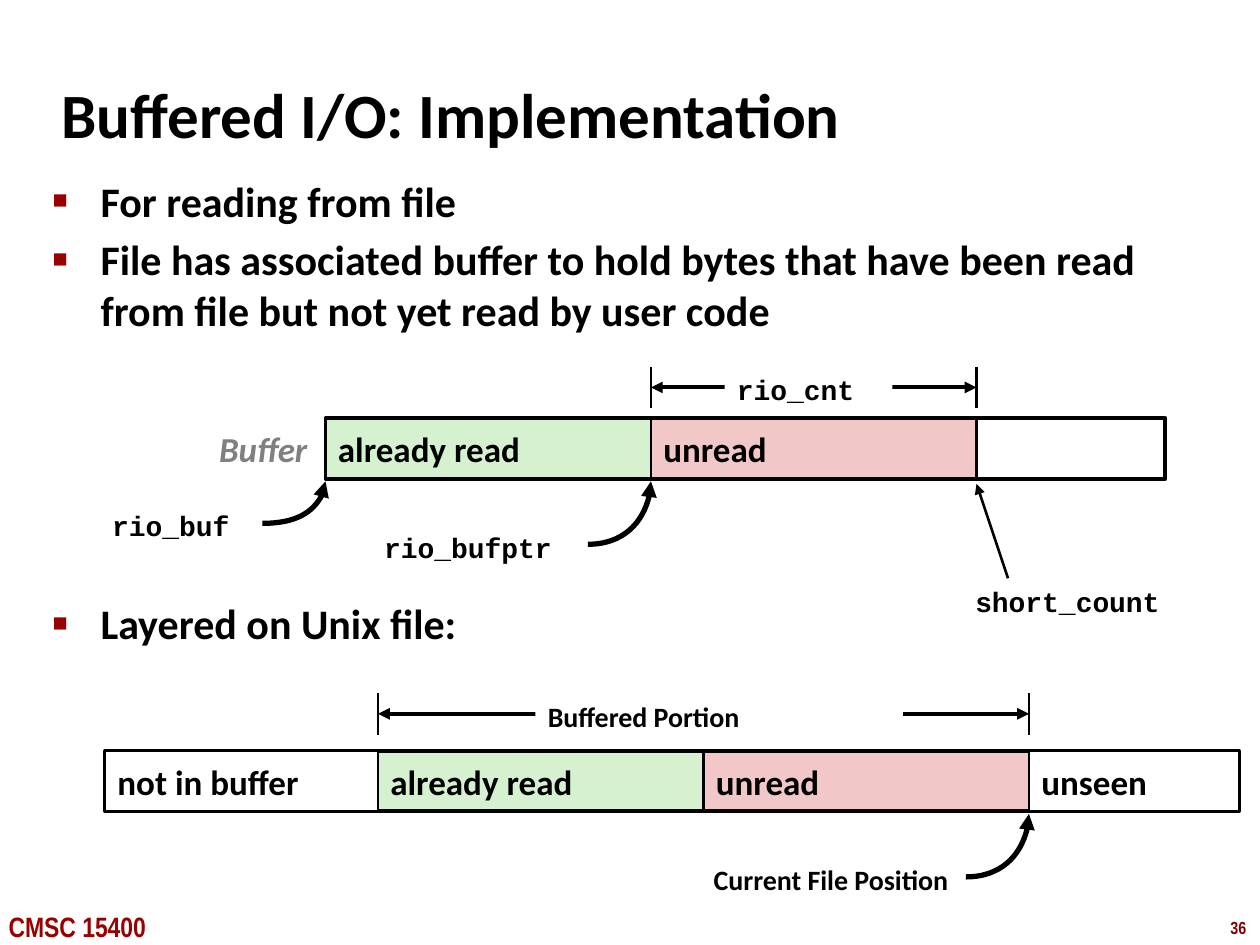
"""Build a slide on how buffered I/O is implemented."""
from dataclasses import dataclass

from lxml.etree import SubElement
from pptx import Presentation
from pptx.dml.color import RGBColor
from pptx.enum.shapes import MSO_CONNECTOR, MSO_SHAPE
from pptx.enum.text import MSO_ANCHOR, PP_ALIGN
from pptx.oxml.ns import qn
from pptx.util import Inches, Pt


@dataclass(frozen=True)
class Theme:
    ink: str = "000000"
    paper: str = "FFFFFF"
    green: str = "D5F1CF"
    pink: str = "F1C7C7"
    gray: str = "808080"
    red: str = "990000"
    dark: str = "800000"
    sans: str = "Calibri"
    mono: str = "Courier New"
    narrow: str = "Arial Narrow"
    title: int = 36
    body: int = 24
    cell: int = 20
    label: int = 16
    small: int = 10
    thin: float = 1.5
    thick: float = 2.25
    bold: float = 3


class Deck:
    def __init__(self, theme, cols=120, rows=90):
        self.theme = theme
        self.show = Presentation()
        self.show.slide_width, self.show.slide_height = Inches(10), Inches(7.5)
        self.dx = self.show.slide_width / cols
        self.dy = self.show.slide_height / rows
        self.slide = self.show.slides.add_slide(self.show.slide_layouts[6])
        self.shapes = self.slide.shapes

    def grid(self, *spots):
        return [round(n * (self.dy if i % 2 else self.dx)) for i, n in enumerate(spots)]

    def add_run(self, para, words, size, color=None, face=None, slant=False):
        run = para.add_run()
        run.text = words
        font = run.font
        font.name, font.size = face or self.theme.sans, Pt(size)
        font.bold, font.italic = True, slant
        font.color.rgb = RGBColor.from_string(color or self.theme.ink)

    def text(self, at, words, size=None, wrap=True, mid=False, fill=None,
             align=PP_ALIGN.LEFT, **style):
        box = self.shapes.add_textbox(*self.grid(*at))
        if fill:
            box.fill.solid()
            box.fill.fore_color.rgb = RGBColor.from_string(fill)
        frame = box.text_frame
        frame.word_wrap = wrap
        frame.vertical_anchor = MSO_ANCHOR.MIDDLE if mid else MSO_ANCHOR.TOP
        para = frame.paragraphs[0]
        para.alignment = align
        self.add_run(para, words, size or self.theme.label, **style)

    def list(self, at, items):
        frame = self.shapes.add_textbox(*self.grid(*at)).text_frame
        frame.word_wrap = True
        for i, (words, gap) in enumerate(items):
            para = frame.add_paragraph() if i else frame.paragraphs[0]
            para.space_before = Pt(gap)
            props = para._p.get_or_add_pPr()
            props.set("marL", str(Inches(0.38)))
            props.set("indent", str(-Inches(0.38)))
            tint = SubElement(props, qn("a:buClr"))
            SubElement(tint, qn("a:srgbClr"), val=self.theme.red)
            SubElement(props, qn("a:buSzPct"), val="60000")
            SubElement(props, qn("a:buFont"), typeface="Arial")
            SubElement(props, qn("a:buChar"), char="■")
            self.add_run(para, words, self.theme.body)

    def cell(self, left, top, width, words="", fill=None, line=None):
        box = self.shapes.add_shape(MSO_SHAPE.RECTANGLE, *self.grid(left, top, width, 5.76))
        box.shadow.inherit = False
        if fill:
            box.fill.solid()
            box.fill.fore_color.rgb = RGBColor.from_string(fill)
        else:
            box.fill.background()
        self.ink(box, line or self.theme.thin)
        if words:
            frame = box.text_frame
            frame.vertical_anchor = MSO_ANCHOR.MIDDLE
            frame.paragraphs[0].alignment = PP_ALIGN.LEFT
            self.add_run(frame.paragraphs[0], words, self.theme.cell)

    def ink(self, shape, width, *ends):
        shape.line.width = Pt(width)
        shape.line.color.rgb = RGBColor.from_string(self.theme.ink)
        for end in ends:
            SubElement(shape.element.spPr.find(qn("a:ln")), qn(f"a:{end}End"), type="triangle")

    def line(self, start, stop, width, *ends):
        wire = self.shapes.add_connector(MSO_CONNECTOR.STRAIGHT, *self.grid(*start, *stop))
        self.ink(wire, width, *ends)
        SubElement(wire.element.spPr, qn("a:effectLst"))

    def curve(self, x, y, width, height):
        bend = 0.55
        pen = self.shapes.build_freeform(*self.grid(x, y))
        pen.add_line_segments([
            self.grid(x, y + height * bend),
            self.grid(x - width * (1 - bend), y + height),
            self.grid(x - width, y + height)], close=False)
        shape = pen.convert_to_shape()
        shape.shadow.inherit = False
        shape.fill.background()
        self.ink(shape, self.theme.bold, "head")
        track = shape.element.spPr.find(".//" + qn("a:path"))
        steps = track.findall(qn("a:lnTo"))
        cubic = SubElement(track, qn("a:cubicBezTo"))
        for step in steps:
            cubic.append(step[0])
            track.remove(step)

    def span(self, left, right, top, label, words, **style):
        for x in (left, right):
            self.line((x, top + 3.96), (x, top), self.theme.thin)
        self.line((left, top + 1.98), (right, top + 1.98), self.theme.thick, "head", "tail")
        x, width, height = label
        self.text((x, top, width, height), words, fill=self.theme.paper, **style)


def main():
    t = Theme()
    deck = Deck(t)
    deck.text((116, 86.7, 4, 3.24), "36", t.small, wrap=False, color=t.dark, face=t.narrow)
    deck.text((-0.36, 86, 17, 4.44), "CMSC 15400", wrap=False, color=t.red, face=t.narrow)
    deck.text((4.7, 5.76, 99.6, 10), "Buffered I/O: Implementation", t.title, mid=True)
    deck.list((3.84, 16.08, 109, 52), [
        ("For reading from file", 0),
        ("File has associated buffer to hold bytes that have been read "
         "from file but not yet read by user code", 4.8),
        ("Layered on Unix file:", 150)])

    top, low, wide = 39.84, 71.52, 31
    deck.cell(62, top, wide, "unread", t.pink)
    deck.cell(31, top, wide, "already read", t.green)
    deck.cell(31, top, 80, line=t.thick)
    deck.text((19.68, 40.08, 11.16, 5.28), "Buffer", t.cell, wrap=False,
              color=t.gray, slant=True)
    deck.curve(31, top + 6, 6, 4)
    deck.curve(62, top + 6, 6, 6)
    deck.span(62, 93, 34.92, (69, 16, 4.08), "rio_cnt", face=t.mono)
    deck.line((96, 55.08), (93, top + 6.24), t.thin, "tail")
    for x, y, width, words in ((9.5, 47.88, 13.7, "rio_buf"), (35.4, 49.92, 21, "rio_bufptr"),
                               (91.7, 55.08, 21, "short_count")):
        deck.text((x, y, width, 4.08), words, face=t.mono)

    deck.cell(67, low, wide, "unread", t.pink)
    deck.cell(36, low, wide, "already read", t.green)
    deck.cell(10, low, 108, line=t.thick)
    deck.cell(10, low, 26, "not in buffer", t.paper)
    deck.cell(98, low, 20, "unseen", t.paper)
    deck.curve(98, low + 6, 6, 6)
    deck.span(36, 98, 66, (51, 35, 4.44), "Buffered Portion")
    deck.text((57.5, 81.6, 34, 4.44), "Current File Position", align=PP_ALIGN.RIGHT)
    deck.show.save("out.pptx")


if __name__ == "__main__":
    main()
